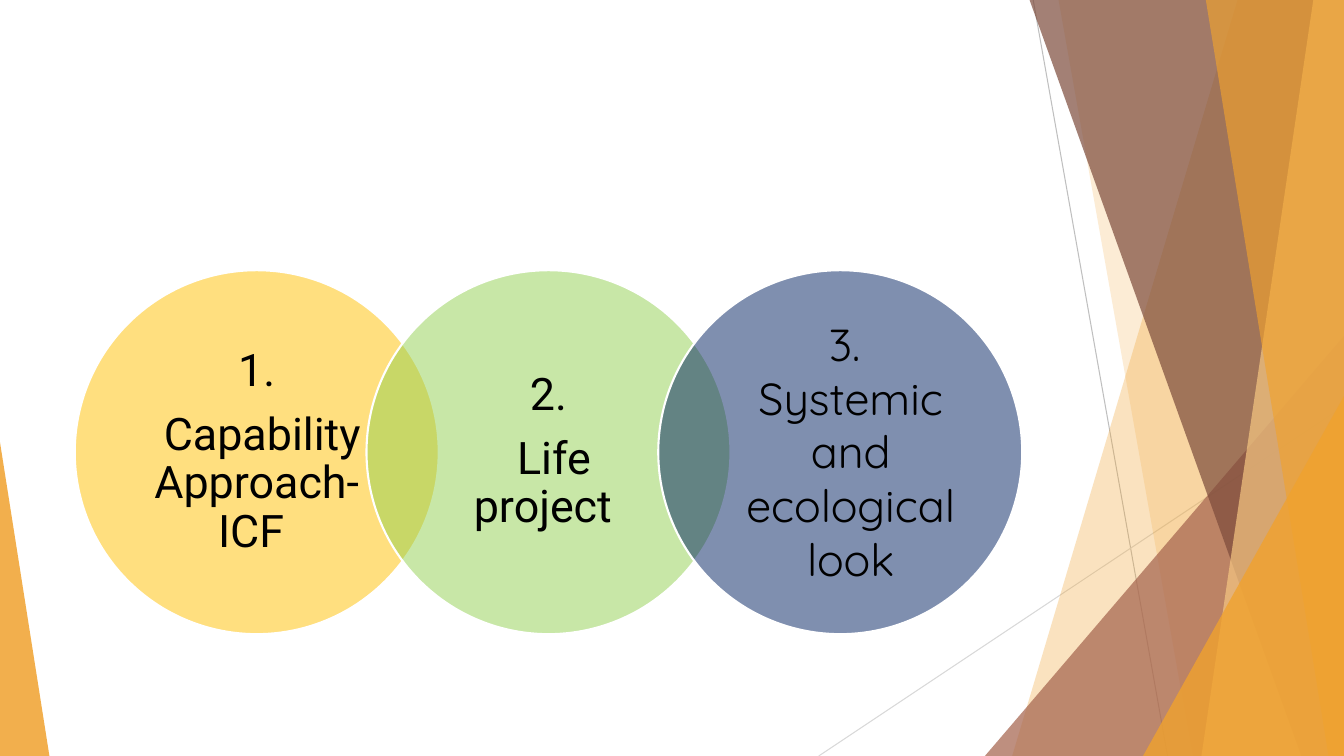
from lxml import etree
from pptx import Presentation
from pptx.dml.color import RGBColor
from pptx.enum.shapes import MSO_CONNECTOR, MSO_SHAPE
from pptx.enum.text import MSO_ANCHOR, MSO_AUTO_SIZE, PP_ALIGN
from pptx.oxml.ns import qn
from pptx.util import Pt

LINE = MSO_CONNECTOR.STRAIGHT
OVAL = MSO_SHAPE.OVAL
WEDGE = MSO_SHAPE.ISOSCELES_TRIANGLE
MIDDLE = MSO_ANCHOR.MIDDLE
CENTER = PP_ALIGN.CENTER
GROW = MSO_AUTO_SIZE.SHAPE_TO_FIT_TEXT

WIDE, HIGH = 960, 540
AMBER = "F0A22E"
SIZE, STEP = 260, 208.4  # circle diameter and distance between circles
LEFT, TOP = 53.4, 193
INSET = 38.2  # from a circle's box to its text box


def color(code):
    return RGBColor.from_string(code)


def paint(shape, code, alpha):
    """Fill a shape with a see-through colour, without line or shadow."""
    shape.shadow.inherit = False
    shape.fill.solid()
    shape.fill.fore_color.rgb = color(code)
    tone = shape.fill._xPr.find(qn("a:solidFill"))[0]
    etree.SubElement(tone, qn("a:alpha")).set("val", str(alpha * 1000))
    shape.line.fill.background()


def add_line(slide, start, end, code):
    line = slide.shapes.add_connector(LINE, *map(Pt, start + end))
    line.line.color.rgb = color(code)
    line.line.width = Pt(0.75)
    etree.SubElement(line._element.spPr, qn("a:effectLst"))


def add_band(slide, top, foot, code, alpha):
    """Band from a slanted left edge to the right side of the slide."""
    rise = -0.7
    form = slide.shapes.build_freeform(Pt(top), Pt(rise))
    corners = [(WIDE, rise), (WIDE, HIGH), (foot, HIGH)]
    form.add_line_segments([(Pt(x), Pt(y)) for x, y in corners])
    paint(form.convert_to_shape(), code, alpha)


def add_wedge(slide, left, top, width, peak, code, alpha):
    """Right triangle standing on the foot of the slide."""
    box = map(Pt, (left, top, width, HIGH - top))
    wedge = slide.shapes.add_shape(WEDGE, *box)
    wedge.adjustments[0] = peak
    paint(wedge, code, alpha)


def add_disc(slide, left, code):
    disc = slide.shapes.add_shape(OVAL, Pt(left), Pt(TOP), Pt(SIZE), Pt(SIZE))
    paint(disc, code, 50)
    disc.line.color.rgb = color("FFFFFF")
    disc.line.width = Pt(1.5)


def add_text(slide, box, text, font):
    label = slide.shapes.add_textbox(*map(Pt, box))
    frame = label.text_frame
    frame.word_wrap = True
    frame.text = text
    for para in frame.paragraphs:
        para.alignment = CENTER
        for run in para.runs:
            run.font.name = font
            run.font.size = Pt(32)
            run.font.color.rgb = color("000000")
    return frame


def add_label(slide, left, text):
    """Text centred inside a circle."""
    side = SIZE - 2 * INSET
    frame = add_text(slide, (left + INSET, TOP + INSET, side, side), text, "Roboto")
    frame.vertical_anchor = MIDDLE
    frame.margin_left = frame.margin_right = Pt(14.3)
    frame.margin_top = frame.margin_bottom = Pt(3)
    for para in frame.paragraphs:
        para.line_spacing = 0.9
        para.space_after = Pt(11.2)


def add_decor(slide):
    add_line(slide, (738, 0), (834, HIGH), "BFBFBF")
    add_line(slide, (WIDE, 290), (584.8, HIGH), "D9D9D9")
    add_band(slide, 884.2, 723, AMBER, 30)
    add_band(slide, 756, 852, AMBER, 20)
    add_wedge(slide, 703.5, 240, 256.5, 1, "A5644E", 72)
    add_band(slide, 735.2, 929.6, "7C4B3B", 70)
    add_band(slide, 938.2, 858.2, "F6C782", 70)
    add_band(slide, 861.2, 949, AMBER, 65)
    add_wedge(slide, 816.5, 283, 143.5, 1, AMBER, 80)
    add_wedge(slide, 0, 316, 35.3, 0, AMBER, 85)


def main():
    deck = Presentation()
    deck.slide_width, deck.slide_height = Pt(WIDE), Pt(HIGH)
    slide = deck.slides.add_slide(deck.slide_layouts[6])

    # Slanted bands and wedges at the edges
    add_decor(slide)

    # Row of overlapping circles
    discs = [
        ("FFC000", "1.\n Capability Approach- ICF "),
        ("92D050", "2.\n Life project "),
        ("002060", None),
    ]
    for i, (code, text) in enumerate(discs):
        left = LEFT + i * STEP
        add_disc(slide, left, code)
        if text:
            add_label(slide, left, text)

    # Text over the third circle
    frame = add_text(slide, (513.4, 222.5, 188.6, 200.9),
                     "3. \nSystemic and ecological look", "Quicksand")
    frame.auto_size = GROW

    deck.save("out.pptx")


if __name__ == "__main__":
    main()
